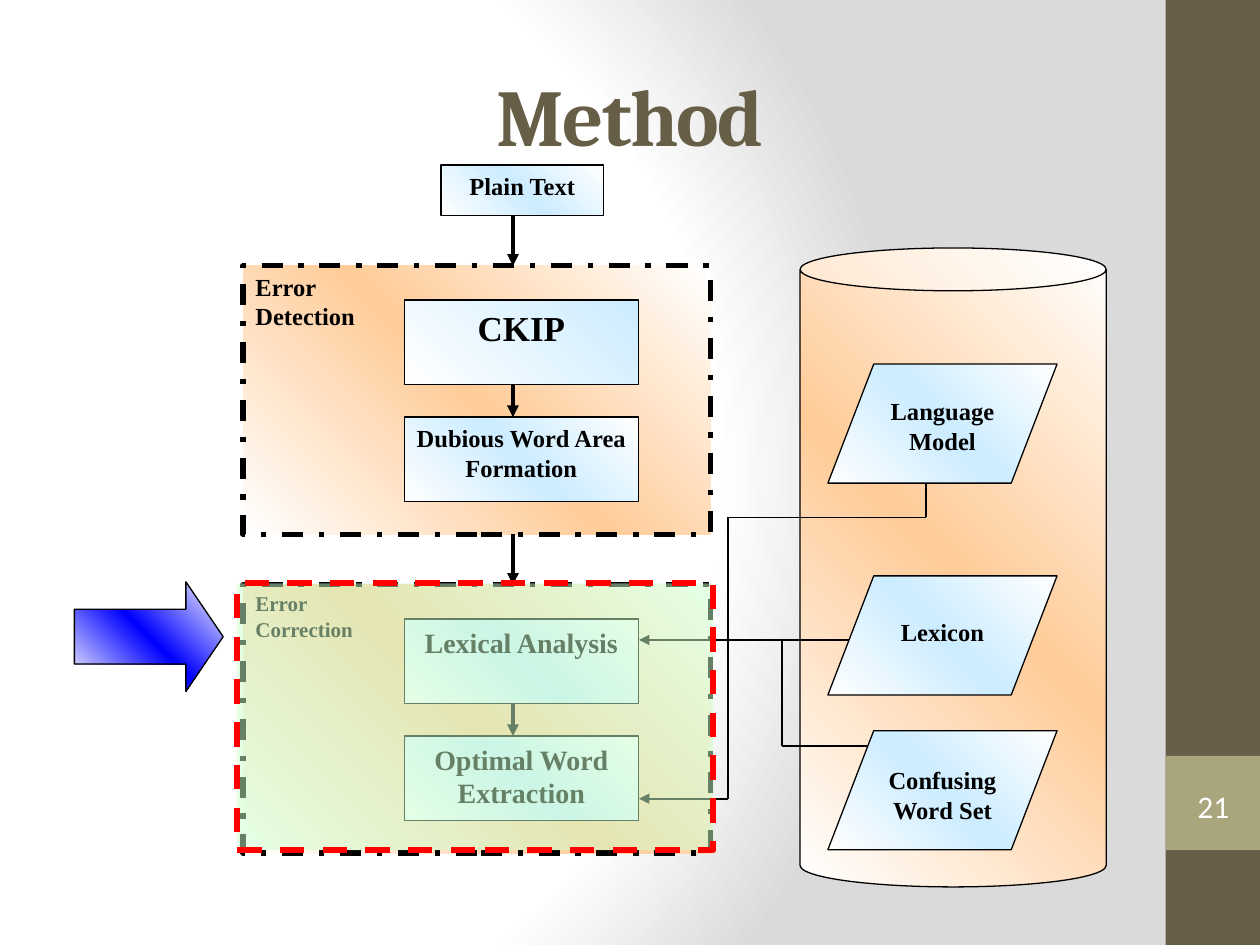
"""Build the Method slide: a two-stage error pipeline fed by three data stores."""
from itertools import pairwise

from lxml import etree
from pptx import Presentation
from pptx import util as u
from pptx.dml.color import RGBColor
from pptx.enum import dml, shapes, text
from pptx.oxml.ns import qn

SHAPE = shapes.MSO_SHAPE
CENTER, LEFT = text.PP_ALIGN.CENTER, text.PP_ALIGN.LEFT
SERIF = "Times New Roman"
ORANGE = [(0, "FFFFFF"), (50, "FFCC99"), (100, "FFFFFF")]
SKY = [(0, "FFFFFF"), (50, "CCECFF"), (100, "FFFFFF")]
HALF_SKY = [(0, "FFFFFF"), (100, "CCECFF")]
BLUE = [(0, "FFFFFF"), (50, "0000FF"), (100, "FFFFFF")]
BACKDROP = [(0, "FFFFFF"), (75, "FFFFFF"), (100, "DADADA")]

STAGES = [
    (["Error", "Detection"], 14,
     [("CKIP", 20, HALF_SKY), ("Dubious Word Area Formation", 14, SKY)]),
    (["Error", "Correction"], 12,
     [("Lexical Analysis", 16, SKY), ("Optimal Word Extraction", 16, SKY)]),
]
STORES = [("Language Model", 7.34, 0.65), ("Lexicon", 11.61, 0.82),
          ("Confusing Word Set", 14.73, 0.7)]
LINKS = [
    ([(18.67, 9.75), (18.67, 10.43), (14.68, 10.43), (14.68, 16.1), (12.88, 16.1)], True),
    ([(17.22, 12.9), (15.77, 12.9), (12.88, 12.9)], True),
    ([(15.77, 12.9), (15.77, 15.04), (17.58, 15.04)], False),
]
STAGE_X, STAGE_Y, STAGE_W, STAGE_H, STAGE_PITCH = 4.9, 5.36, 9.42, 5.41, 6.43
STEP_X, STEP_W, STEP_H, STEP_TOP, STEP_PITCH = 8.15, 4.72, 1.7, 0.69, 2.36
FLOW_X, FLOW_GAP = 10.34, 1.02


def rgb(value):
    return RGBColor.from_string(value)


def gradient(fill, owner, stops, path=None):
    fill.gradient()
    grad = owner.xpath(".//a:gradFill")[0]
    for child in list(grad):
        grad.remove(child)
    gs_list = etree.SubElement(grad, qn("a:gsLst"))
    for pos, value in stops:
        gs = etree.SubElement(gs_list, qn("a:gs"), pos=str(pos * 1000))
        etree.SubElement(gs, qn("a:srgbClr"), val=value)
    if path:
        node = etree.SubElement(grad, qn("a:path"), path="circle")
        sides = {side: str(pct * 1000) for side, pct in zip("ltrb", path)}
        etree.SubElement(node, qn("a:fillToRect"), **sides)
    else:
        etree.SubElement(grad, qn("a:lin"), ang=str(315 * 60000), scaled="1")


def add_shape(s, kind, box, fill, line="000000", width=0.75, dash=None):
    sp = s.shapes.add_shape(kind, *map(u.Cm, box))
    sp.shadow.inherit = False
    if fill is None:
        sp.fill.background()
    elif isinstance(fill, str):
        sp.fill.solid()
        sp.fill.fore_color.rgb = rgb(fill)
    else:
        gradient(sp.fill, sp._element, fill)
    if line is None:
        sp.line.fill.background()
    else:
        sp.line.color.rgb = rgb(line)
        sp.line.width = u.Pt(width)
        sp.line.dash_style = dash
    return sp


def write(sp, lines, size, align=CENTER, font=SERIF, color="000000", bold=True,
          anchor=text.MSO_ANCHOR.TOP):
    tf = sp.text_frame
    tf.word_wrap = True
    tf.vertical_anchor = anchor
    tf.text = "\n".join(lines)
    for p in tf.paragraphs:
        p.alignment = align
        p.font.name, p.font.size, p.font.bold = font, u.Pt(size), bold
        p.font.color.rgb = rgb(color)
    return tf


def connect(s, start, end, width, arrow=True):
    c = s.shapes.add_connector(shapes.MSO_CONNECTOR.STRAIGHT, *map(u.Cm, (*start, *end)))
    c.line.color.rgb = rgb("000000")
    c.line.width = u.Pt(width)
    if arrow:
        etree.SubElement(c.line._get_or_add_ln(), qn("a:tailEnd"), type="triangle")
    etree.SubElement(c._element.spPr, qn("a:effectLst"))


def add_stage(s, top, label, size, steps):
    connect(s, (FLOW_X, top - FLOW_GAP), (FLOW_X, top), 2.25)
    frame = add_shape(s, SHAPE.RECTANGLE, (STAGE_X, top, STAGE_W, STAGE_H), ORANGE,
                      width=3, dash=dml.MSO_LINE.DASH_DOT)
    write(frame, label, size, LEFT)
    first = top + STEP_TOP
    for i, (name, step_size, fill) in enumerate(steps):
        box = (STEP_X, first + i * STEP_PITCH, STEP_W, STEP_H)
        write(add_shape(s, SHAPE.RECTANGLE, box, fill), [name], step_size)
    connect(s, (FLOW_X, first + STEP_H), (FLOW_X, first + STEP_PITCH), 2.25)


def add_frame(s):
    gradient(s.background.fill, s._element, BACKDROP, (20, 50, 100, 50))
    add_shape(s, SHAPE.RECTANGLE, (23.5, 0, 1.9, 19.05), "675E47", None)
    add_shape(s, SHAPE.RECTANGLE, (23.5, 15.24, 1.9, 1.9), "A9A57C", None)
    title = s.shapes.title
    title.left, title.top, title.width, title.height = map(u.Cm, (0.84, 0.71, 23.72, 3.18))
    tf = write(title, ["Method"], 46, font="Cambria", color="675E47",
               anchor=text.MSO_ANCHOR.MIDDLE)
    tf.auto_size = text.MSO_AUTO_SIZE.NONE
    tf.paragraphs[0].runs[0]._r.get_or_add_rPr().set("spc", "-100")
    number = add_shape(s, SHAPE.DOUBLE_BRACKET, (23.7, 15.7, 1.52, 1.09), None, None)
    tf = write(number, ["21"], 18, font="Calibri", color="FFFFFF", bold=False,
               anchor=text.MSO_ANCHOR.MIDDLE)
    tf.margin_left = tf.margin_right = tf.margin_top = tf.margin_bottom = 0


def main():
    prs = Presentation()
    prs.slide_width, prs.slide_height = u.Cm(25.4), u.Cm(19.05)
    s = prs.slides.add_slide(prs.slide_layouts[5])
    add_frame(s)

    can = add_shape(s, SHAPE.CAN, (16.13, 5, 6.17, 12.88), ORANGE)
    can.adjustments[0] = 0.14
    source = add_shape(s, SHAPE.RECTANGLE, (8.89, 3.33, 3.28, 1.02), SKY)
    write(source, ["Plain Text"], 14)
    for i, stage in enumerate(STAGES):
        add_stage(s, STAGE_Y + i * STAGE_PITCH, *stage)
    for points, arrow in LINKS:
        for start, end in pairwise(points):
            connect(s, start, end, 1, arrow and end == points[-1])

    pointer = add_shape(s, SHAPE.RIGHT_ARROW, (1.5, 11.73, 3, 2.21), BLUE)
    pointer.adjustments[1] = 0.34
    focus = add_shape(s, SHAPE.RECTANGLE, (4.78, 11.76, 9.6, 5.38), "CCFFCC", "FF0000",
                      3.5, dml.MSO_LINE.DASH)
    tint = focus._element.spPr.xpath("./a:solidFill/a:srgbClr")[0]
    etree.SubElement(tint, qn("a:alpha"), val="50000")

    for name, top, inset in STORES:
        store = add_shape(s, SHAPE.FLOWCHART_DATA, (16.69, top, 4.62, 2.4), SKY)
        write(store, [name], 14).margin_top = u.Cm(inset)
    prs.save("out.pptx")


if __name__ == "__main__":
    main()
